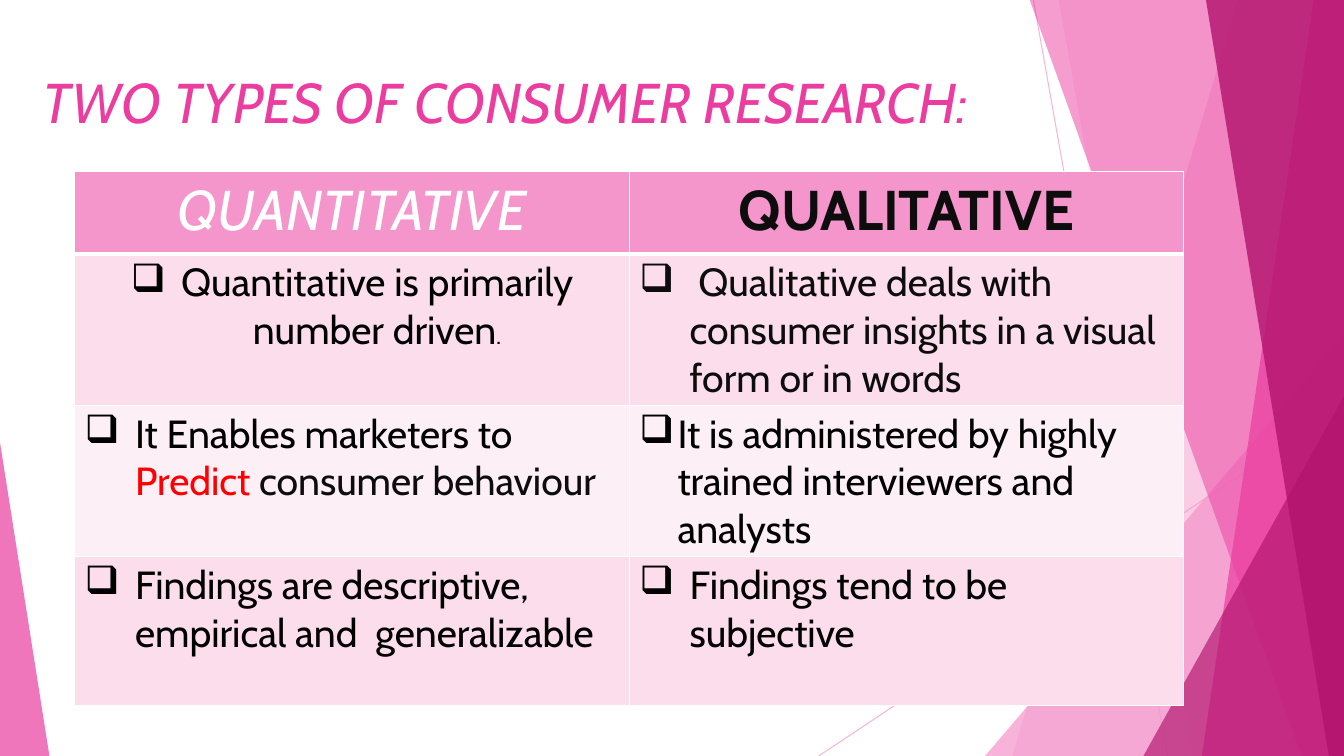
from lxml.etree import SubElement
from pptx import Presentation
from pptx.dml.color import RGBColor
from pptx.enum.shapes import MSO_CONNECTOR, MSO_SHAPE
from pptx.enum.text import MSO_ANCHOR, PP_ALIGN
from pptx.oxml.ns import qn
from pptx.util import Emu, Pt

# Content: a run is (text, size, colour, bold, italic)
FONT = "Cabin"
WHITE, BLACK, INK, RED = "FFFFFF", "000000", "0D0D0D", "FF0000"
PALE, PINK, DEEP = "F496CB", "EB3D9F", "B2136D"
TITLE = ("TWO TYPES OF CONSUMER RESEARCH:", 40, PINK, False, True)
HEADINGS = [("QUANTITATIVE", 40, WHITE, False, True),
            ("QUALITATIVE", 40, INK, True, False)]
# Body cell: (hanging indent, alignment, [(text, size, colour)])
LEFT, CENTER = PP_ALIGN.LEFT, PP_ALIGN.CENTER
COMPARISON = [
    [(50, CENTER, [("Quantitative is primarily number driven", 28, BLACK), (".", 18, BLACK)]),
     (50, LEFT, [(" Qualitative deals with consumer insights in a visual form or in words", 28, INK)])],
    [(50, LEFT, [("It Enables marketers to ", 28, BLACK), ("Predict ", 28, RED),
                 ("consumer behaviour", 28, INK)]),
     (38, LEFT, [("It is administered by highly trained interviewers and analysts", 28, BLACK)])],
    [(50, LEFT, [("Findings are descriptive, empirical and  generalizable", 28, BLACK)]),
     (50, LEFT, [("Findings tend to be subjective", 28, BLACK)])],
]
ROW_FILLS = ["FBDDEC", "FDEFF6", "FBDDEC"]

# Layout in px, 100 to the inch
SCALE = 9144
WIDTH, HEIGHT = 1333, 750
TITLE_BOX = (32, 59, 982, 90)
TABLE_LEFT, TABLE_TOP, COLUMN, HEADER_ROW, BODY_ROW = 74, 170, 550, 82, 148
RAYS = [(1025, 0, 1158, HEIGHT), (WIDTH, 403, 812, HEIGHT)]
# Band: (top x, bottom x), reaching the right edge; wedge: (left, top, width, apex)
FACETS = [
    ("band", (1228, 1004), PALE, 36),
    ("band", (1050, 1183), PALE, 20),
    ("wedge", (977, 333, 356, 1), PALE, 72),
    ("band", (1021, 1291), PINK, 50),
    ("band", (1303, 1192), PINK, 70),
    ("band", (1196, 1318), DEEP, 80),
    ("wedge", (1134, 393, 199, 1), DEEP, 66),
    ("wedge", (0, 439, 49, 0), PINK, 70),
]


def px(*lengths):
    return [Emu(length * SCALE) for length in lengths]


def paint(target, colour, opacity=100):
    target.solid()
    target.fore_color.rgb = RGBColor.from_string(colour)
    if opacity < 100:
        solid = target._xPr.find(qn("a:solidFill"))
        SubElement(solid[0], qn("a:alpha"), val=str(opacity * 1000))


def add_run(paragraph, text, size, colour, bold=False, italic=False):
    run = paragraph.add_run()
    run.text = text
    font = run.font
    font.name, font.size, font.bold, font.italic = FONT, Pt(size), bold, italic
    paint(font.fill, colour)


def hang_bullet(paragraph, indent):
    props = paragraph._p.get_or_add_pPr()
    props.set("marL", str(indent * SCALE))
    props.set("indent", str(-indent * SCALE))
    SubElement(props, qn("a:buChar"), char="❑")


def border(cell, top, bottom):
    props = cell._tc.get_or_add_tcPr()
    for side, points in (("L", 1), ("R", 1), ("T", top), ("B", bottom)):
        line = SubElement(props, qn("a:ln" + side), w=str(Pt(points)))
        solid = SubElement(line, qn("a:solidFill"))
        SubElement(solid, qn("a:srgbClr"), val=WHITE)


prs = Presentation()
prs.slide_width, prs.slide_height = px(WIDTH, HEIGHT)
slide = prs.slides.add_slide(prs.slide_layouts[6])
shapes = slide.shapes

# Thin rays behind the facets
for ends in RAYS:
    ray = shapes.add_connector(MSO_CONNECTOR.STRAIGHT, *px(*ends))
    ray.line.width = Pt(0.75)
    paint(ray.line.fill, PALE, 70)
    SubElement(ray._element.spPr, qn("a:effectLst"))

# Translucent facets
for kind, place, colour, opacity in FACETS:
    if kind == "band":
        top_x, bottom_x = place
        outline = shapes.build_freeform(top_x, -1, scale=SCALE)
        outline.add_line_segments([(WIDTH, -1), (WIDTH, HEIGHT), (bottom_x, HEIGHT)])
        facet = outline.convert_to_shape()
    else:
        left, top, width, apex = place
        facet = shapes.add_shape(MSO_SHAPE.ISOSCELES_TRIANGLE,
                                 *px(left, top, width, HEIGHT - top))
        facet.adjustments[0] = apex
    facet.shadow.inherit = False
    facet.line.fill.background()
    paint(facet.fill, colour, opacity)

# Title
title = shapes.add_textbox(*px(*TITLE_BOX)).text_frame
title.word_wrap = True
title.vertical_anchor = MSO_ANCHOR.TOP
title.margin_top, title.margin_bottom = px(8, 0)
add_run(title.paragraphs[0], *TITLE)

# Comparison table
row_heights = [HEADER_ROW] + [BODY_ROW] * len(COMPARISON)
table = shapes.add_table(len(row_heights), len(HEADINGS), *px(
    TABLE_LEFT, TABLE_TOP, COLUMN * len(HEADINGS), sum(row_heights))).table
for column in table.columns:
    column.width, = px(COLUMN)
for row, height in zip(table.rows, row_heights):
    row.height, = px(height)

for c, heading in enumerate(HEADINGS):
    cell = table.cell(0, c)
    border(cell, 1, 3)
    paint(cell.fill, PALE)
    paragraph = cell.text_frame.paragraphs[0]
    paragraph.alignment = CENTER
    add_run(paragraph, *heading)

for r, (points, fill) in enumerate(zip(COMPARISON, ROW_FILLS), start=1):
    for c, (indent, alignment, runs) in enumerate(points):
        cell = table.cell(r, c)
        border(cell, 3 if r == 1 else 1, 1)
        paint(cell.fill, fill)
        paragraph = cell.text_frame.paragraphs[0]
        hang_bullet(paragraph, indent)
        paragraph.alignment = alignment
        for run in runs:
            add_run(paragraph, *run)

prs.save("out.pptx")
